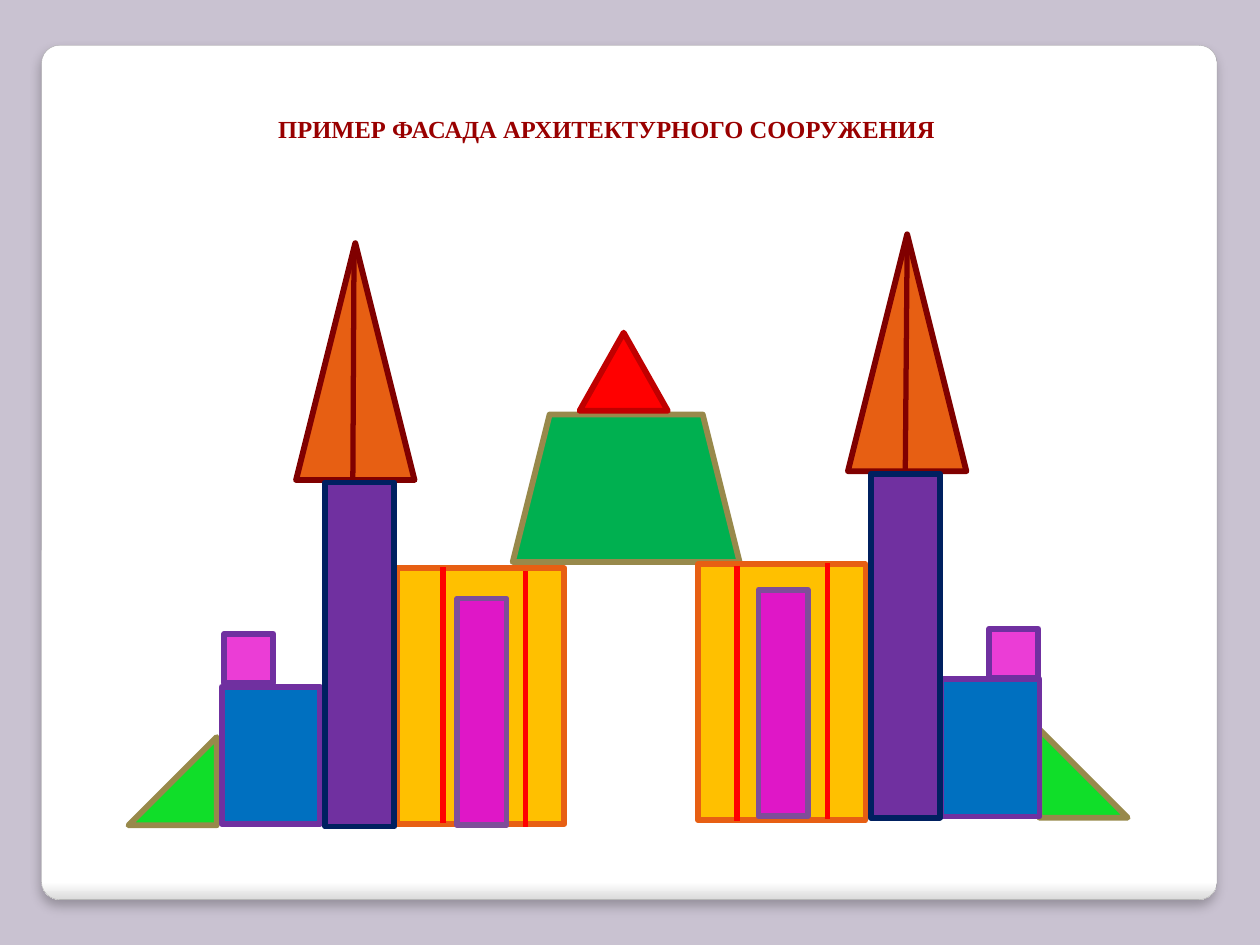
from lxml.etree import SubElement
from pptx import Presentation
from pptx.dml.color import RGBColor as RGB
from pptx.enum.shapes import MSO_CONNECTOR as LINK, MSO_SHAPE as SHAPE
from pptx.enum.text import MSO_AUTO_SIZE as SIZE, MSO_ANCHOR as ANCHOR
from pptx.oxml import parse_xml
from pptx.oxml.ns import nsdecls, qn
from pptx.util import Inches, Pt

WHITE = RGB(0xFF, 0xFF, 0xFF)
MIST = RGB(0xC9, 0xC2, 0xD1)
PALE = RGB(0xDA, 0xDA, 0xDA)
GREY = RGB(0xA4, 0xA4, 0xA4)
ORANGE = RGB(0xE7, 0x5F, 0x13)
MAROON = RGB(0x80, 0x00, 0x00)
GREEN = RGB(0x00, 0xB0, 0x50)
LIME = RGB(0x10, 0xDE, 0x29)
OLIVE = RGB(0x98, 0x89, 0x4B)
RED = RGB(0xFF, 0x00, 0x00)
BRICK = RGB(0xC0, 0x00, 0x00)
GOLD = RGB(0xFF, 0xC0, 0x00)
BLUE = RGB(0x00, 0x70, 0xC0)
PURPLE = RGB(0x70, 0x30, 0xA0)
NAVY = RGB(0x00, 0x20, 0x60)
MAGENTA = RGB(0xDF, 0x17, 0xC7)
VIOLET = RGB(0x7E, 0x4E, 0x99)
PINK = RGB(0xEB, 0x3D, 0xD6)
WINE = RGB(0x99, 0x00, 0x00)

SHADE = (
    f'<a:outerShdw {nsdecls("a")} blurRad="76200" dist="50800" dir="5400000" '
    'algn="tl" rotWithShape="0"><a:srgbClr val="000000">'
    '<a:alpha val="25000"/></a:srgbClr></a:outerShdw>'
)


class Scene:
    """Style and current slide; lengths count cells of a 100 by 75 grid."""

    font = "Times New Roman"
    edge = Pt(3.35)
    bar = Pt(3)

    def __init__(self, deck):
        self.slide = deck.slides.add_slide(deck.slide_layouts[6])
        self.shapes = self.slide.shapes
        self.cell = deck.slide_width / 100

    def grid(self, *cells):
        return [round(n * self.cell) for n in cells]

    def back(self, color):
        fill = self.slide.background.fill
        fill.solid()
        fill.fore_color.rgb = color

    def panel(self, *box):
        """Rounded white card with a grey lower rim and a soft shadow."""
        card = self.shapes.add_shape(SHAPE.ROUNDED_RECTANGLE, *self.grid(*box))
        card.adjustments[0] = 0.021
        card.fill.gradient()
        card.fill.gradient_angle = 270
        for stop, spot, color in zip(card.fill.gradient_stops, (0.98, 1), (WHITE, PALE)):
            stop.position = spot
            stop.color.rgb = color
        card.line.color.rgb = GREY
        card.line.width = Pt(0.16)
        card.shadow.inherit = False
        card.element.spPr.find(qn("a:effectLst")).append(parse_xml(SHADE))

    def block(self, kind, spot, size, fill, edge, turn=0):
        item = self.shapes.add_shape(kind, *self.grid(*spot, *size))
        item.rotation = turn
        item.fill.solid()
        item.fill.fore_color.rgb = fill
        item.line.color.rgb = edge
        item.line.width = self.edge
        SubElement(item.line._get_or_add_ln(), qn("a:round"))
        item.shadow.inherit = False
        return item

    def pair(self, kind, left, right, size, fill, edge, turn=0):
        """The same block on both sides; only the left one is turned."""
        return [self.block(kind, left, size, fill, edge, turn),
                self.block(kind, right, size, fill, edge)]

    def stripe(self, start, end, color):
        link = self.shapes.add_connector(LINK.STRAIGHT, *self.grid(*start, *end))
        link.line.color.rgb = color
        link.line.width = self.bar
        SubElement(link.element.spPr, qn("a:effectLst"))
        return link

    def title(self, words, *box):
        frame = self.shapes.add_textbox(*self.grid(*box)).text_frame
        frame.word_wrap = False
        frame.auto_size = SIZE.SHAPE_TO_FIT_TEXT
        frame.vertical_anchor = ANCHOR.TOP
        frame.text = words
        font = frame.paragraphs[0].runs[0].font
        font.name, font.size, font.bold = self.font, Pt(14), True
        font.color.rgb = WINE


def main():
    deck = Presentation()
    deck.slide_width, deck.slide_height = Inches(10), Inches(7.5)
    scene = Scene(deck)
    scene.back(MIST)
    scene.panel(3.3, 3.6, 93.3, 67.8)

    # Central arch
    scene.block(SHAPE.TRAPEZOID, (40.7, 32.9), (18, 11.7), GREEN, OLIVE)
    scene.block(SHAPE.ISOSCELES_TRIANGLE, (46, 26.4), (7, 6.2), RED, BRICK)

    # Spires and ramps
    scene.pair(SHAPE.ISOSCELES_TRIANGLE, (23.5, 19.3), (67.3, 18.6),
               (9.4, 18.8), ORANGE, MAROON)
    scene.pair(SHAPE.RIGHT_TRIANGLE, (10.2, 58.5), (82.5, 57.9),
               (7, 7), LIME, OLIVE, turn=270)
    poles = [scene.stripe((x, y), (x - 0.1, y + 18.8), MAROON)
             for x, y in ((28.1, 19.8), (72, 18.9))]

    # Walls with their stripes
    scene.pair(SHAPE.RECTANGLE, (31.5, 45.1), (55.4, 44.8),
               (13.3, 20.3), GOLD, ORANGE)
    for x, y in ((35.15, 45), (41.7, 45.3), (58.5, 44.9), (65.65, 44.7)):
        scene.stripe((x, y), (x, y + 20.3), RED)

    # Side wings, towers, doors and turrets
    scene.pair(SHAPE.RECTANGLE, (17.6, 54.5), (74.7, 53.9),
               (7.8, 10.9), BLUE, PURPLE)
    towers = scene.pair(SHAPE.RECTANGLE, (25.8, 38.3), (69.1, 37.6),
                        (5.5, 27.3), PURPLE, NAVY)
    poles[1].end_connect(towers[1], 0)
    scene.pair(SHAPE.RECTANGLE, (36.3, 47.5), (60.2, 46.8),
               (3.9, 18), MAGENTA, VIOLET)
    scene.pair(SHAPE.RECTANGLE, (17.8, 50.3), (78.5, 49.9),
               (3.9, 3.9), PINK, PURPLE)

    scene.title("ПРИМЕР ФАСАДА АРХИТЕКТУРНОГО СООРУЖЕНИЯ", 21.1, 8.6, 54.5, 3.4)
    deck.save("out.pptx")


if __name__ == "__main__":
    main()
